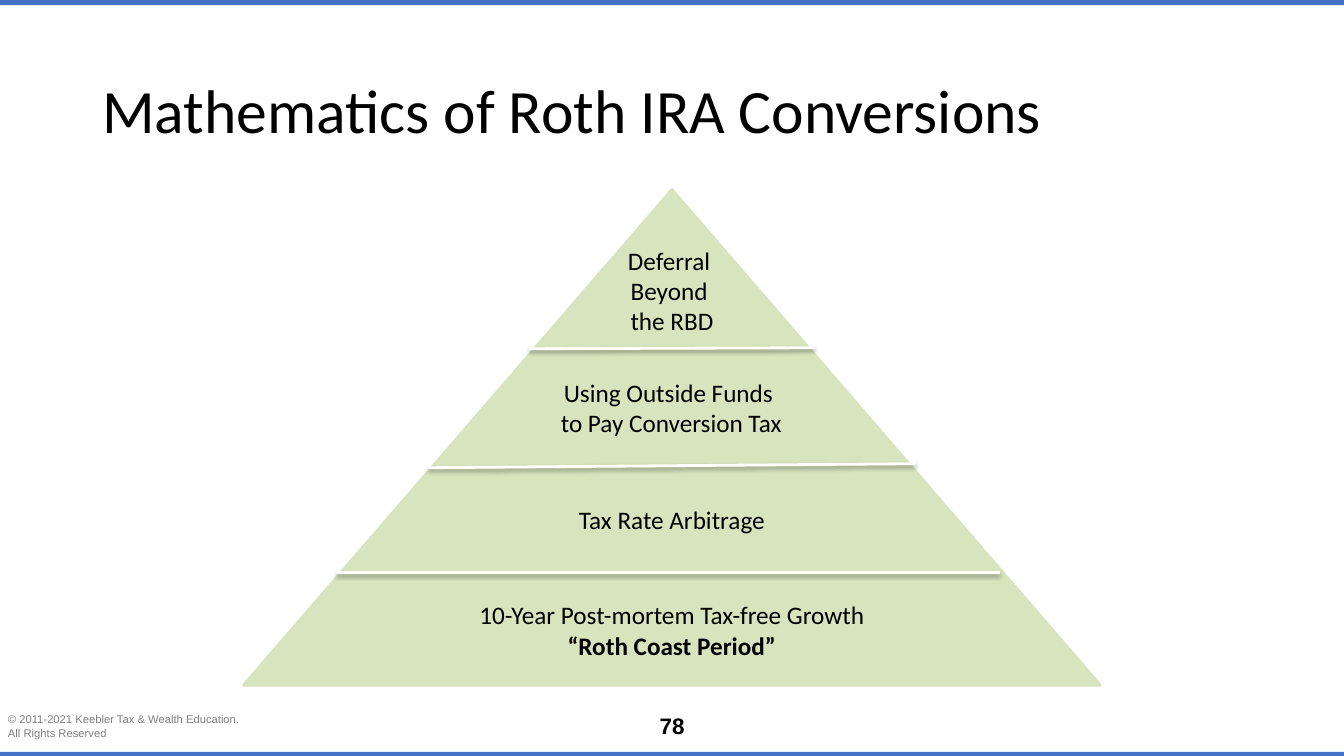
from lxml.etree import SubElement
from pptx import Presentation
from pptx.dml.color import RGBColor
from pptx.enum.shapes import MSO_CONNECTOR as Connector, MSO_SHAPE as Shape
from pptx.enum.text import MSO_ANCHOR as Anchor, PP_ALIGN as Align
from pptx.oxml.ns import qn
from pptx.util import Pt

SLIDE_WIDTH, SLIDE_HEIGHT = 960, 540
BLACK, WHITE, GRAY = "000000", "FFFFFF", "7F7F7F"
BLUE, GREEN = "4472C4", "D7E4BD"

TIERS = [
    ((408, 171.4, 144, 78), [("Deferral ", False), ("Beyond ", False), ("the RBD", False)]),
    ((366.5, 265.7, 226, 54.7), [("Using Outside Funds ", False), ("to Pay Conversion Tax", False)]),
    ((319.7, 356.4, 320.4, 29), [("Tax Rate Arbitrage", False)]),
    ((319.7, 424.8, 320.4, 51), [("10-Year Post-mortem Tax-free Growth", False),
                                 ("“Roth Coast Period”", True)]),
]
DIVIDERS = [
    (378, 249.1, 582, 248.4),
    (306, 334.1, 654, 331.2),
    (240, 409, 714, 409),
]


def color(value):
    return RGBColor.from_string(value)


def add_filled(slide, kind, box, fill, line_width=0):
    shape = slide.shapes.add_shape(kind, *map(Pt, box))
    shape.shadow.inherit = False
    shape.fill.solid()
    shape.fill.fore_color.rgb = color(fill)
    if line_width:
        shape.line.color.rgb = color(fill)
        shape.line.width = Pt(line_width)
    else:
        shape.line.fill.background()


def add_text(slide, box, lines, size, font="Calibri", ink=BLACK,
             align=Align.CENTER, anchor=Anchor.TOP, spacing=1.0):
    frame = slide.shapes.add_textbox(*map(Pt, box)).text_frame
    frame.word_wrap = True
    frame.vertical_anchor = anchor
    for index, (words, bold) in enumerate(lines):
        paragraph = frame.paragraphs[0] if index == 0 else frame.add_paragraph()
        paragraph.alignment = align
        paragraph.line_spacing = spacing
        run = paragraph.add_run()
        run.text = words
        run.font.name = font
        run.font.size = Pt(size)
        run.font.bold = bold
        run.font.color.rgb = color(ink)
    return frame


def add_divider(slide, ends):
    divider = slide.shapes.add_connector(Connector.STRAIGHT, *map(Pt, ends))
    divider.line.color.rgb = color(WHITE)
    divider.line.width = Pt(2)
    effects = SubElement(divider._element.spPr, qn("a:effectLst"))
    shadow = SubElement(effects, qn("a:outerShdw"), blurRad=str(Pt(3.1)),
                        dist=str(Pt(1.6)), dir="5400000", rotWithShape="0")
    shade = SubElement(shadow, qn("a:srgbClr"), val=BLACK)
    SubElement(shade, qn("a:alpha"), val="38000")


def add_footer(slide):
    copyright_frame = add_text(
        slide, (0, 505.4, 184, 26.6),
        [("© 2011-2021 Keebler Tax & Wealth Education.", False), ("All Rights Reserved", False)],
        8, "Arial", GRAY, Align.LEFT)
    copyright_frame.margin_left = Pt(5.7)
    add_text(slide, (453, 505.4, 54, 26.6), [("78", True)], 16, "Arial")


def main():
    deck = Presentation()
    deck.slide_width, deck.slide_height = Pt(SLIDE_WIDTH), Pt(SLIDE_HEIGHT)
    slide = deck.slides.add_slide(deck.slide_layouts[6])

    add_footer(slide)
    for top, height in [(0, 3.6), (537, 3)]:
        add_filled(slide, Shape.RECTANGLE, (0, top, SLIDE_WIDTH, height), BLUE)
    add_text(slide, (66, 28.8, 828, 104.4), [("Mathematics of Roth IRA Conversions", False)],
             44, align=Align.LEFT, anchor=Anchor.MIDDLE, spacing=0.9)

    add_filled(slide, Shape.ISOSCELES_TRIANGLE, (174, 135.4, 612, 354), GREEN, 2)
    for ends in DIVIDERS:
        add_divider(slide, ends)
    for box, lines in TIERS:
        add_text(slide, box, lines, 18)

    deck.save("out.pptx")


if __name__ == "__main__":
    main()
